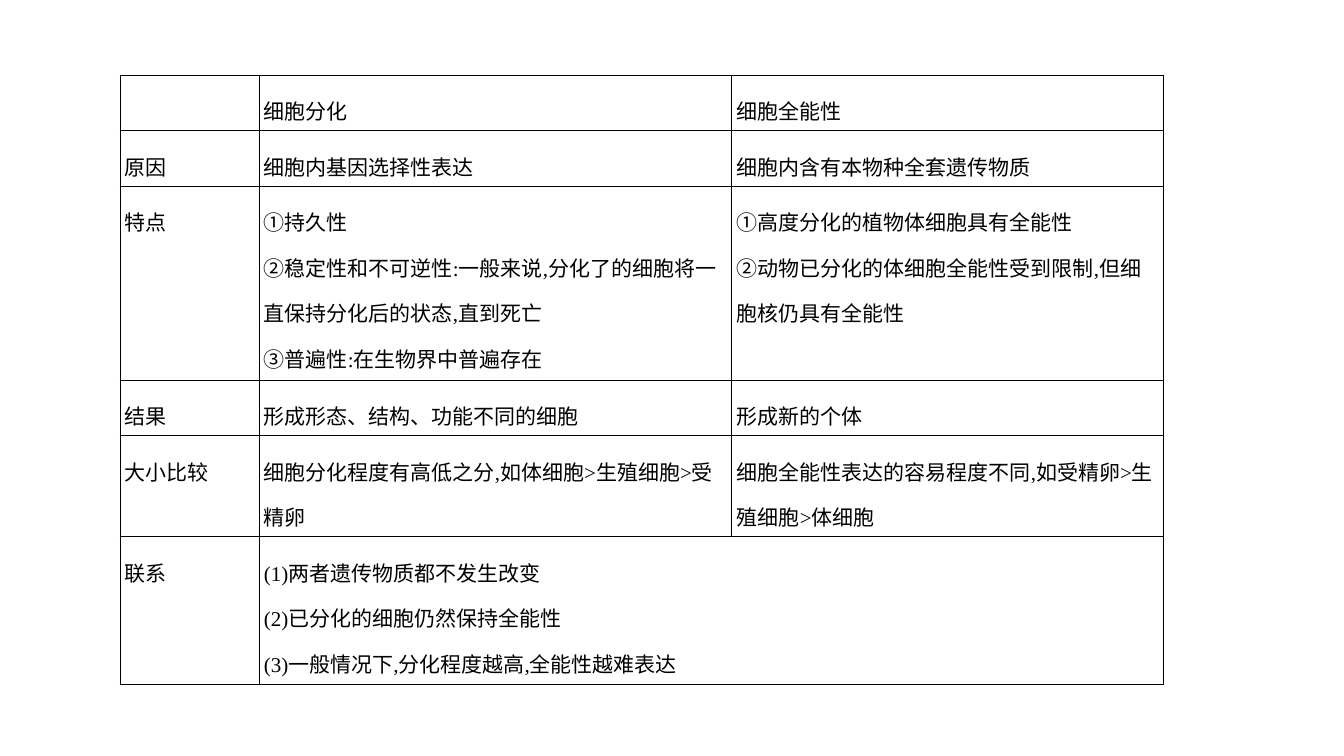
"""Build a slide with a table comparing cell differentiation and totipotency."""
from dataclasses import dataclass

from lxml.etree import SubElement
from pptx import Presentation
from pptx.dml.color import RGBColor
from pptx.enum.text import MSO_ANCHOR
from pptx.oxml.ns import qn
from pptx.table import Table, _Cell as Cell
from pptx.util import Emu, Pt

EMU_PER_PX = 914400 / 100.8
BLACK = RGBColor(0x00, 0x00, 0x00)
BORDER_WIDTH = Pt(0.75)
BORDER_TAGS = ("a:lnL", "a:lnR", "a:lnT", "a:lnB")
BLANK_LAYOUT = 6


def px(length: int) -> Emu:
    return Emu(round(length * EMU_PER_PX))


SLIDE_SIZE = {"slide_width": px(1344), "slide_height": px(756)}
TABLE_FORMAT = {"first_row": False, "horz_banding": False}
CELL_FORMAT = {
    "margin_left": px(5),
    "margin_right": px(5),
    "margin_top": px(5),
    "margin_bottom": px(5),
    "vertical_anchor": MSO_ANCHOR.TOP,
}
FONT_FORMAT = {"name": "Times New Roman", "size": Pt(15)}
TABLE_LEFT, TABLE_TOP = 120, 75
COLUMN_WIDTHS = (139, 473, 432)


@dataclass(frozen=True)
class ComparisonRow:
    height: int
    texts: tuple[str, ...]


ROWS = (
    ComparisonRow(54, ("", "细胞分化", "细胞全能性")),
    ComparisonRow(54, ("原因", "细胞内基因选择性表达", "细胞内含有本物种全套遗传物质")),
    ComparisonRow(194, (
        "特点",
        "①持久性\n"
        "②稳定性和不可逆性:一般来说,分化了的细胞将一直保持分化后的状态,直到死亡\n"
        "③普遍性:在生物界中普遍存在",
        "①高度分化的植物体细胞具有全能性\n"
        "②动物已分化的体细胞全能性受到限制,但细胞核仍具有全能性",
    )),
    ComparisonRow(54, ("结果", "形成形态、结构、功能不同的细胞", "形成新的个体")),
    ComparisonRow(101, (
        "大小比较",
        "细胞分化程度有高低之分,如体细胞>生殖细胞>受精卵",
        "细胞全能性表达的容易程度不同,如受精卵>生殖细胞>体细胞",
    )),
    ComparisonRow(148, (
        "联系",
        "(1)两者遗传物质都不发生改变\n"
        "(2)已分化的细胞仍然保持全能性\n"
        "(3)一般情况下,分化程度越高,全能性越难表达",
    )),
)


def apply_format(target: object, values: dict[str, object]) -> None:
    for name, value in values.items():
        setattr(target, name, value)


def format_cell(cell: Cell) -> None:
    apply_format(cell, CELL_FORMAT)
    properties = cell._tc.get_or_add_tcPr()
    for tag in BORDER_TAGS:
        border = SubElement(properties, qn(tag), w=str(BORDER_WIDTH))
        fill = SubElement(border, qn("a:solidFill"))
        SubElement(fill, qn("a:srgbClr"), val=str(BLACK))
    cell.fill.background()


def write_cell(cell: Cell, text: str) -> None:
    cell.text = text
    for paragraph in cell.text_frame.paragraphs:
        paragraph.line_spacing = 1.5
        for run in paragraph.runs:
            apply_format(run.font, FONT_FORMAT)
            run.font.color.rgb = BLACK


def fill_table(table: Table) -> None:
    apply_format(table, TABLE_FORMAT)
    for column, width in zip(table.columns, COLUMN_WIDTHS):
        column.width = px(width)
    for cell in table.iter_cells():
        format_cell(cell)
    last_column = len(COLUMN_WIDTHS) - 1
    for index, row in enumerate(ROWS):
        table.rows[index].height = px(row.height)
        for column_index, text in enumerate(row.texts):
            write_cell(table.cell(index, column_index), text)
        if len(row.texts) <= last_column:
            first_merged = table.cell(index, len(row.texts) - 1)
            first_merged.merge(table.cell(index, last_column))


def main() -> None:
    presentation = Presentation()
    apply_format(presentation, SLIDE_SIZE)
    slide = presentation.slides.add_slide(presentation.slide_layouts[BLANK_LAYOUT])
    frame = slide.shapes.add_table(
        len(ROWS), len(COLUMN_WIDTHS), px(TABLE_LEFT), px(TABLE_TOP),
        px(sum(COLUMN_WIDTHS)), px(sum(row.height for row in ROWS)),
    )
    fill_table(frame.table)
    presentation.save("out.pptx")


if __name__ == "__main__":
    main()
